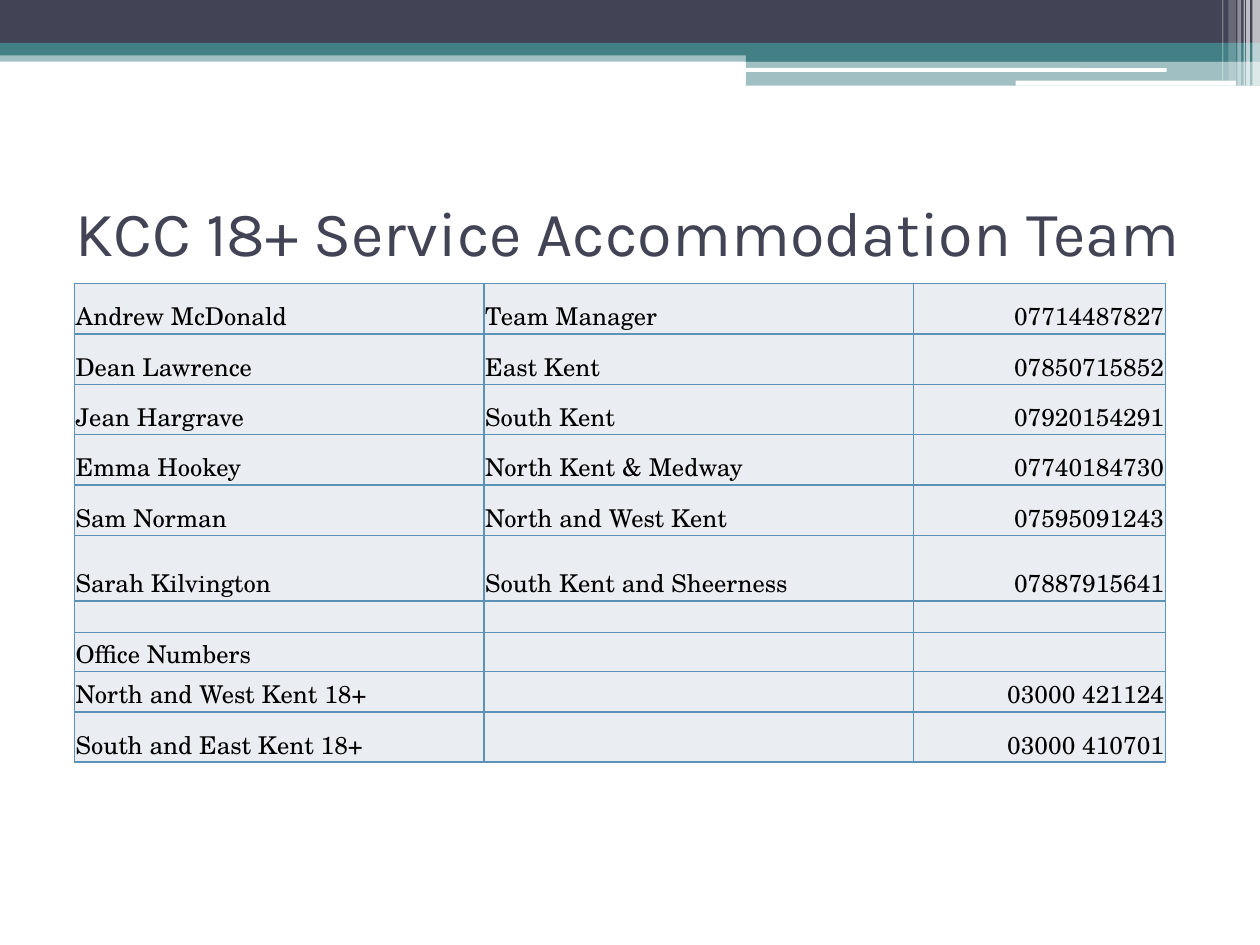
from lxml import etree
from pptx import Presentation
from pptx.dml.color import RGBColor
from pptx.enum import shapes, text
from pptx.oxml.ns import qn
from pptx.util import Inches, Pt

THEME = {
    "navy": "424456", "teal": "438086", "white": "FFFFFF", "black": "000000",
    "cell": "EAEEF3", "border": "5C92B5",
    "title_font": "Karla", "body_font": "TeX Gyre Schola",
    "title_size": 36, "body_size": 14, "border_width": 1,
}

TITLE = "KCC 18+ Service Accommodation Team"

# Name or office, area or role, telephone, row height
CONTACTS = [
    ("Andrew McDonald\u00a0", "Team Manager", "07714487827", 0.4),
    ("Dean Lawrence", "East Kent", "07850715852", 0.4),
    ("Jean Hargrave", "South Kent", "07920154291", 0.4),
    ("Emma Hookey", "North Kent & Medway", "07740184730", 0.4),
    ("Sam Norman", "North and West Kent", "07595091243", 0.4),
    ("Sarah Kilvington", "South Kent and Sheerness", "07887915641", 0.52),
    ("", "", "", 0.25),
    ("Office Numbers", "", "", 0.31),
    ("North and West Kent 18+", "", "03000 421124", 0.32),
    ("South and East Kent 18+", "", "03000 410701", 0.4),
]
COLUMN_WIDTHS = (3.25, 3.41, 2.0)

# Left, top, width, height, colour, opacity in percent
BANDS = [
    (0, 0.4, 10, 0.09, "teal", 50),
    (0, 0, 10, 0.34, "navy", 100),
    (0, 0.34, 10, 0.1, "teal", 100),
    (5.92, 0.39, 4.08, 0.1, "teal", 100),
    (5.92, 0.48, 4.08, 0.2, "teal", 50),
]
ROUNDED_LINES = [(5.91, 0.54, 3.35, 0.03), (8.06, 0.64, 1.75, 0.04)]
# Left, width, height, opacity in percent
STRIPES = [
    (9.94, 0.06, 0.68, 65), (9.89, 0.03, 0.68, 65), (9.87, 0.01, 0.68, 60),
    (9.82, 0.03, 0.68, 40), (9.75, 0.06, 0.64, 20), (9.7, 0.01, 0.64, 30),
]


def rgb(name):
    return RGBColor.from_string(THEME[name])


def write(frame, content, font, size, color, align=text.PP_ALIGN.LEFT):
    paragraph = frame.paragraphs[0]
    paragraph.alignment = align
    if not content:
        # An empty cell keeps the type size, so its row stays low
        etree.SubElement(paragraph._p, qn("a:endParaRPr"), sz=str(size * 100))
        return
    run = paragraph.add_run()
    run.text = content
    run.font.name = font
    run.font.size = Pt(size)
    run.font.bold = False
    run.font.color.rgb = rgb(color)


def add_block(slide, left, top, width, height, color, opacity=100, rounded=False):
    kind = shapes.MSO_SHAPE.ROUNDED_RECTANGLE if rounded else shapes.MSO_SHAPE.RECTANGLE
    shape = slide.shapes.add_shape(
        kind, Inches(left), Inches(top), Inches(width), Inches(height))
    shape.shadow.inherit = False
    shape.fill.solid()
    shape.fill.fore_color.rgb = rgb(color)
    shape.line.fill.background()
    if opacity < 100:
        fill_color = shape.fill._xPr.find(qn("a:solidFill"))[0]
        etree.SubElement(fill_color, qn("a:alpha"), val=str(opacity * 1000))


def add_borders(cell):
    properties = cell._tc.get_or_add_tcPr()
    for position, side in enumerate(("a:lnL", "a:lnR", "a:lnT", "a:lnB")):
        line = etree.Element(qn(side), w=str(Pt(THEME["border_width"])))
        fill = etree.SubElement(line, qn("a:solidFill"))
        etree.SubElement(fill, qn("a:srgbClr"), val=THEME["border"])
        properties.insert(position, line)


def add_contacts(slide):
    height = sum(contact[-1] for contact in CONTACTS)
    table = slide.shapes.add_table(
        len(CONTACTS), len(COLUMN_WIDTHS), Inches(0.59), Inches(2.25),
        Inches(sum(COLUMN_WIDTHS)), Inches(height)).table
    table.first_row = False
    table.horz_banding = False
    for column, width in zip(table.columns, COLUMN_WIDTHS):
        column.width = Inches(width)
    for row, (*values, row_height) in zip(table.rows, CONTACTS):
        row.height = Inches(row_height)
        for index, (cell, value) in enumerate(zip(row.cells, values)):
            cell.margin_left = cell.margin_right = cell.margin_top = Inches(0.01)
            cell.margin_bottom = 0
            cell.vertical_anchor = text.MSO_ANCHOR.BOTTOM
            cell.fill.solid()
            cell.fill.fore_color.rgb = rgb("cell")
            add_borders(cell)
            align = text.PP_ALIGN.RIGHT if index == 2 else text.PP_ALIGN.LEFT
            write(cell.text_frame, value, THEME["body_font"], THEME["body_size"],
                  "black", align)


def main():
    presentation = Presentation()
    presentation.slide_width, presentation.slide_height = Inches(10), Inches(7.5)
    slide = presentation.slides.add_slide(presentation.slide_layouts[5])

    # Header decoration
    for band in BANDS:
        add_block(slide, *band)
    for line in ROUNDED_LINES:
        add_block(slide, *line, "white", rounded=True)
    for left, width, height, opacity in STRIPES:
        add_block(slide, left, 0, width, height, "white", opacity)

    # Title
    title = slide.shapes.title
    title.left, title.top = Inches(0.5), Inches(1.25)
    title.width, title.height = Inches(9), Inches(1.17)
    title.text_frame.vertical_anchor = text.MSO_ANCHOR.MIDDLE
    title.text_frame.auto_size = text.MSO_AUTO_SIZE.NONE
    write(title.text_frame, TITLE, THEME["title_font"], THEME["title_size"], "navy")

    # Contact table
    add_contacts(slide)
    presentation.save("out.pptx")


if __name__ == "__main__":
    main()
